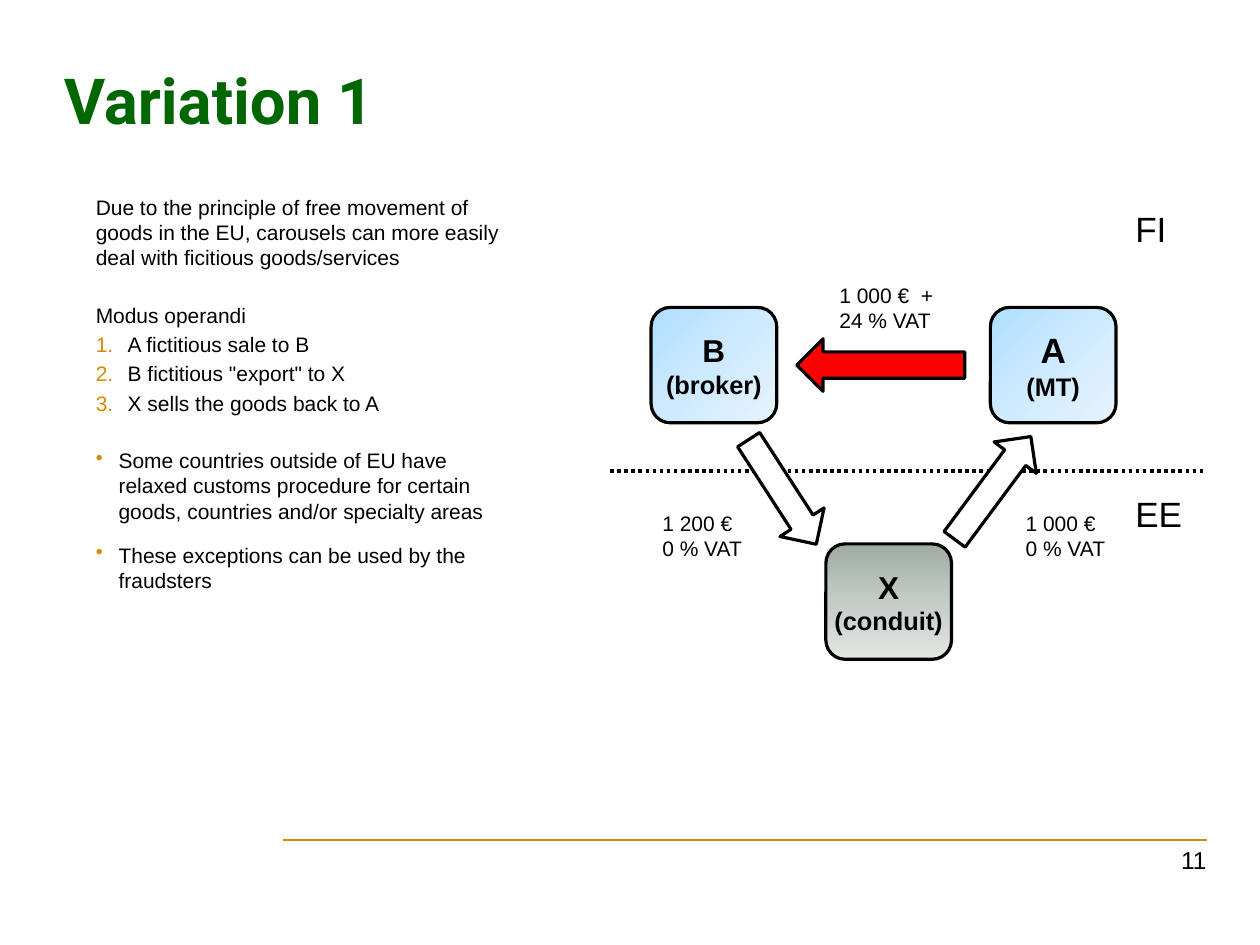
import copy
import dataclasses
import typing

import pptx
import pptx.dml.color
import pptx.enum.dml
import pptx.enum.shapes
import pptx.enum.text
import pptx.oxml
import pptx.oxml.ns
import pptx.shapes.autoshape
import pptx.slide
import pptx.text.text
import pptx.util

Inches = pptx.util.Inches
Pt = pptx.util.Pt
Align = pptx.enum.text.PP_ALIGN
Anchor = pptx.enum.text.MSO_ANCHOR
Kind = pptx.enum.shapes.MSO_SHAPE
Dash = pptx.enum.dml.MSO_LINE
qn = pptx.oxml.ns.qn
SPACE = pptx.oxml.ns.nsdecls("a")


@dataclasses.dataclass(frozen=True)
class Theme:
    face: str = "Arial"
    head_face: str = "Roboto"
    ink: str = "000000"
    green: str = "006600"
    gold: str = "D58B00"
    red: str = "FF0000"
    white: str = "FFFFFF"
    blues: tuple[str, ...] = ("AFDFFF", "CEEAFF", "E7F4FF")
    grays: tuple[str, ...] = ("9EABA2", "C5CCC7", "E3E6E3")
    title: float = 40
    body: float = 13.2
    land: float = 22.1
    name: float = 19.9
    role: float = 16
    page: float = 15.4
    edge: float = 2


THEME = Theme()


@dataclasses.dataclass(frozen=True)
class Party:
    name: str
    role: str
    left: float
    top: float
    fill: tuple[str, ...]
    angle: float
    size: float = THEME.name


@dataclasses.dataclass(frozen=True)
class Flow:
    left: float
    top: float
    length: float
    turn: float
    fill: str


@dataclasses.dataclass(frozen=True)
class Label:
    lines: tuple[str, ...]
    left: float
    top: float
    width: float
    height: float
    size: float = THEME.body


@dataclasses.dataclass(frozen=True)
class Point:
    text: str
    before: float = 2.64
    mark: str = ""
    indent: float = 0


PARTIES = (
    Party("B", "(broker)", 5.7, 2.69, THEME.blues, 45),
    Party("X", "(conduit)", 7.23, 4.76, THEME.grays, 90),
    Party("A", "(MT)", 8.67, 2.69, THEME.blues, 45, THEME.land),
)
FLOWS = (
    Flow(8.46, 3.71, 1.12, 216.6, THEME.white),
    Flow(7.48, 2.46, 1.47, 90, THEME.red),
    Flow(6.62, 3.76, 1.09, 327.1, THEME.white),
)
LABELS = (
    Label(("FI",), 9.84, 1.77, 0.72, 0.47, THEME.land),
    Label(("EE",), 9.84, 4.26, 0.72, 0.47, THEME.land),
    Label(("1 200 €", "0 % VAT"), 5.7, 4.42, 0.94, 0.55),
    Label(("1 000 €", "0 % VAT"), 8.88, 4.42, 0.94, 0.55),
    Label(("1 000 €  + 24 % VAT",), 7.25, 2.42, 1.13, 0.55),
)
NUMBER = '<a:buAutoNum {} type="arabicPeriod"/>'
BULLET = '<a:buChar {} char="•"/>'
POINTS = (
    Point("Due to the principle of free movement of goods in the EU, "
          "carousels can more easily deal with ficitious goods/services"),
    Point("Modus operandi", 20.5),
    Point("A fictitious sale to B", mark=NUMBER, indent=0.28),
    Point('B fictitious "export" to X', mark=NUMBER, indent=0.28),
    Point("X sells the goods back to A", mark=NUMBER, indent=0.28),
    Point("Some countries outside of EU have relaxed customs procedure for "
          "certain goods, countries and/or specialty areas", 20.5, BULLET, 0.2),
    Point("These exceptions can be used by the fraudsters", 12, BULLET, 0.2),
)


def tint(code: str) -> pptx.dml.color.RGBColor:
    return pptx.dml.color.RGBColor.from_string(code)


def write(frame: pptx.text.text.TextFrame, text: str, *, size: float = THEME.body,
          bold: bool = False, color: str = THEME.ink, face: str = THEME.face,
          align: Align = Align.LEFT, before: float = 0, mark: str = "",
          indent: float = 0) -> None:
    """Add a paragraph, using the frame's first one while it is empty."""
    first = frame.paragraphs[0]
    para = frame.add_paragraph() if first.runs else first
    para.alignment = align
    para.space_before = Pt(before)
    run = para.add_run()
    run.text = text
    run.font.name = face
    run.font.size = Pt(size)
    run.font.bold = bold
    run.font.color.rgb = tint(color)
    if mark:
        props = para._p.get_or_add_pPr()
        props.set("marL", str(Inches(indent)))
        props.set("indent", str(-Inches(indent)))
        hue = f'<a:buClr {SPACE}><a:srgbClr val="{THEME.gold}"/></a:buClr>'
        for part in (hue, mark.format(SPACE)):
            props.append(pptx.oxml.parse_xml(part))


def add_box(slide: pptx.slide.Slide, left: float, top: float, width: float,
            height: float, anchor: Anchor = Anchor.TOP) -> pptx.text.text.TextFrame:
    box = slide.shapes.add_textbox(Inches(left), Inches(top), Inches(width), Inches(height))
    frame = box.text_frame
    frame.word_wrap = True
    frame.vertical_anchor = anchor
    return frame


def add_rule(slide: pptx.slide.Slide, left: float, right: float, top: float,
             color: str, weight: float, dash: typing.Optional[Dash] = None) -> None:
    """Draw a level line without shadow."""
    rule = slide.shapes.add_connector(pptx.enum.shapes.MSO_CONNECTOR.STRAIGHT,
                                      Inches(left), Inches(top), Inches(right), Inches(top))
    rule.line.color.rgb = tint(color)
    rule.line.width = Pt(weight)
    if dash is not None:
        rule.line.dash_style = dash
    rule._element.spPr.append(pptx.oxml.parse_xml(f"<a:effectLst {SPACE}/>"))


def add_form(slide: pptx.slide.Slide, kind: Kind, left: float, top: float,
             width: float, height: float) -> pptx.shapes.autoshape.Shape:
    form = slide.shapes.add_shape(kind, Inches(left), Inches(top), Inches(width), Inches(height))
    form.shadow.inherit = False
    form.line.color.rgb = tint(THEME.ink)
    form.line.width = Pt(THEME.edge)
    return form


def add_party(slide: pptx.slide.Slide, party: Party) -> None:
    form = add_form(slide, Kind.ROUNDED_RECTANGLE, party.left, party.top, 1.1, 1.01)
    form.fill.gradient()
    form.fill.gradient_angle = 360 - party.angle
    stops = form._element.spPr.find(qn("a:gradFill")).find(qn("a:gsLst"))
    stops.insert(1, copy.deepcopy(stops[0]))
    for place, (stop, code) in enumerate(zip(form.fill.gradient_stops, party.fill)):
        stop.position = place / 2
        stop.color.rgb = tint(code)
    frame = form.text_frame
    frame.word_wrap = False
    frame.vertical_anchor = Anchor.MIDDLE
    for text, size in ((party.name, party.size), (party.role, THEME.role)):
        write(frame, text, size=size, bold=True, align=Align.CENTER)


def add_flow(slide: pptx.slide.Slide, flow: Flow) -> None:
    form = add_form(slide, Kind.DOWN_ARROW, flow.left, flow.top, 0.46, flow.length)
    form.rotation = flow.turn
    form.fill.solid()
    form.fill.fore_color.rgb = tint(flow.fill)


def main() -> None:
    deck = pptx.Presentation()
    deck.slide_width, deck.slide_height = Inches(11.03), Inches(8.27)
    slide = deck.slides.add_slide(deck.slide_layouts[6])
    add_rule(slide, 2.48, 10.57, 7.35, THEME.gold, 1.5)
    write(add_box(slide, 0.46, 0.18, 9.38, 1.38, Anchor.MIDDLE), "Variation 1",
          size=THEME.title, bold=True, color=THEME.green, face=THEME.head_face)
    body = add_box(slide, 0.74, 1.65, 3.86, 5.61)
    for point in POINTS:
        write(body, point.text, before=point.before, mark=point.mark, indent=point.indent)
    write(add_box(slide, 8.36, 7.35, 2.3, 0.55), "11", size=THEME.page, align=Align.RIGHT)
    add_rule(slide, 5.34, 10.55, 4.12, THEME.ink, 2.25, Dash.ROUND_DOT)
    for party in PARTIES:
        add_party(slide, party)
    for flow in FLOWS:
        add_flow(slide, flow)
    for label in LABELS:
        frame = add_box(slide, label.left, label.top, label.width, label.height)
        for line in label.lines:
            write(frame, line, size=label.size)
    deck.save("out.pptx")


if __name__ == "__main__":
    main()
